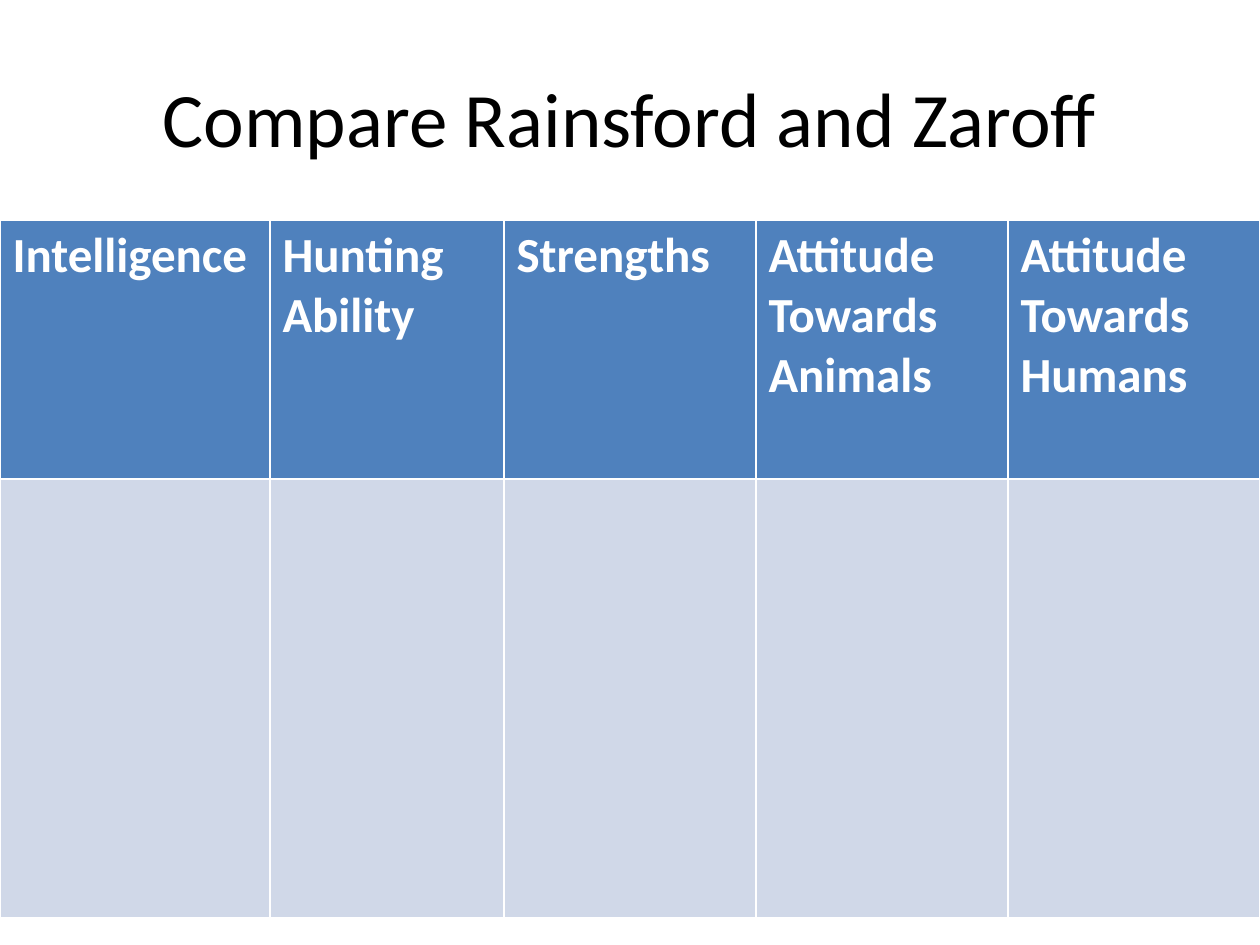
from pptx import Presentation
from pptx.dml.color import RGBColor
from pptx.enum.text import MSO_ANCHOR, PP_ALIGN
from pptx.util import Emu, Pt

MIDDLE = MSO_ANCHOR.MIDDLE
CENTER = PP_ALIGN.CENTER

TITLE = "Compare Rainsford and Zaroff"
COLUMNS = [
    ("Intelligence", 270),
    ("Hunting Ability", 234),
    ("Strengths", 252),
    ("Attitude Towards Animals", 252),
    ("Attitude Towards Humans", 252),
]
ROWS = [(259, "4F81BD"), (439, "D0D8E8")]  # height, fill
WIDTH, HEIGHT = 1260, 945
TABLE_TOP = 220
FONT = "Calibri"


def px(n):
    return Emu(round(n * 914400 / 126))


def style(par, size, color, bold=False):
    font = par.font
    font.name, font.size, font.bold = FONT, Pt(size), bold
    font.color.rgb = RGBColor.from_string(color)


deck = Presentation()
deck.slide_width, deck.slide_height = px(WIDTH), px(HEIGHT)
slide = deck.slides.add_slide(deck.slide_layouts[5])

title = slide.shapes.title
title.left, title.top, title.width, title.height = map(px, (63, 38, 1134, 158))
title.text_frame.text = TITLE
title.text_frame.vertical_anchor = MIDDLE
heading = title.text_frame.paragraphs[0]
heading.alignment = CENTER
style(heading, 44, "000000")

# The default table style supplies the white rules between cells.
table = slide.shapes.add_table(
    len(ROWS), len(COLUMNS), 0, px(TABLE_TOP), px(WIDTH),
    px(sum(height for height, _ in ROWS)),
).table
for row, (height, fill) in zip(table.rows, ROWS):
    row.height = px(height)
    for cell in row.cells:
        cell.fill.solid()
        cell.fill.fore_color.rgb = RGBColor.from_string(fill)
for i, (label, width) in enumerate(COLUMNS):
    table.columns[i].width = px(width)
    cell = table.cell(0, i)
    cell.text = label
    style(cell.text_frame.paragraphs[0], 28, "FFFFFF", bold=True)

deck.save("out.pptx")
